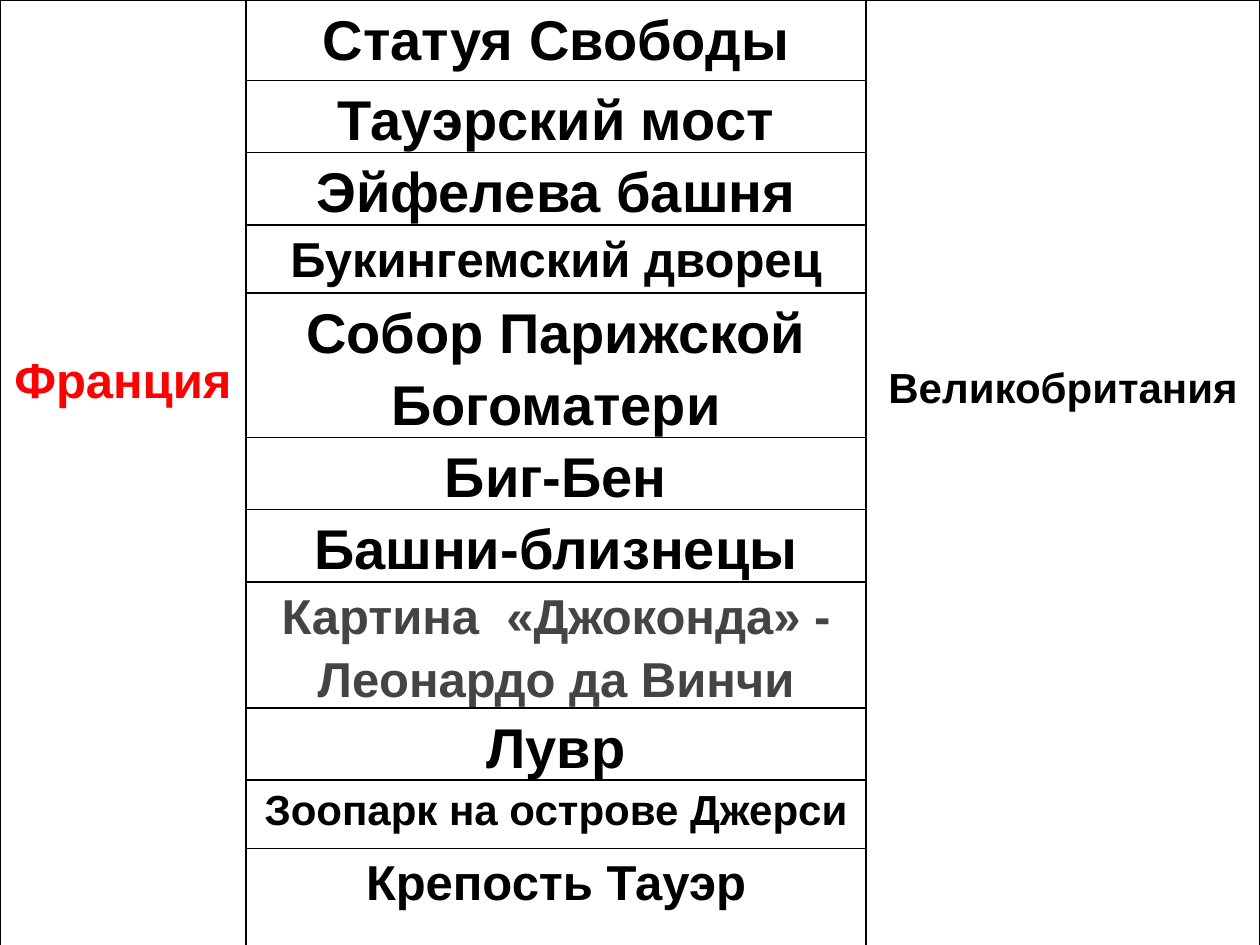
from dataclasses import dataclass

from lxml import etree
from pptx import Presentation
from pptx.dml.color import RGBColor
from pptx.enum import text
from pptx.oxml import ns
from pptx.util import Pt


@dataclass(frozen=True)
class Theme:
    """Colours, type sizes and spacing of the slide."""
    font: str = "Arial"
    ink: str = "000000"
    accent: str = "FF0000"
    muted: str = "444444"
    paper: str = "FFFFFF"
    large: int = 32
    medium: int = 28
    small: int = 24
    line_spacing: float = 1.15
    border: float = 1
    side_margin: float = 3


THEME = Theme()
COLUMN_WIDTHS = (140.5, 354.5, 225)
LANDMARKS = (
    ("Статуя Свободы", 46, THEME.large, THEME.ink),
    ("Тауэрский мост", 41, THEME.large, THEME.ink),
    ("Эйфелева башня", 41, THEME.large, THEME.ink),
    ("Букингемский дворец", 39, THEME.medium, THEME.ink),
    ("Собор Парижской Богоматери", 82.5, THEME.large, THEME.ink),
    ("Биг-Бен", 41, THEME.large, THEME.ink),
    ("Башни-близнецы", 41, THEME.large, THEME.ink),
    ("Картина  «Джоконда» - Леонардо да Винчи", 72, THEME.medium, THEME.muted),
    ("Лувр", 41, THEME.large, THEME.ink),
    ("Зоопарк на острове Джерси", 39, THEME.small, THEME.ink),
    ("Крепость Тауэр", 64, THEME.medium, THEME.ink),
)
COUNTRIES = (
    (0, "Франция", THEME.medium, THEME.accent, 198),
    (2, "Великобритания", THEME.small, THEME.ink, 205),
)


def frame_cell(cell):
    """Give a cell its border lines and paper fill."""
    properties = cell._tc.get_or_add_tcPr()
    for side in ("a:lnL", "a:lnR", "a:lnT", "a:lnB"):
        line = etree.SubElement(properties, ns.qn(side), w=str(Pt(THEME.border)))
        fill = etree.SubElement(line, ns.qn("a:solidFill"))
        etree.SubElement(fill, ns.qn("a:srgbClr"), val=THEME.ink)
    cell.fill.solid()
    cell.fill.fore_color.rgb = RGBColor.from_string(THEME.paper)


def write_cell(cell, label, size, color, top=0):
    """Write one centred bold label at a distance from the cell top."""
    cell.margin_left = cell.margin_right = Pt(THEME.side_margin)
    cell.margin_top, cell.margin_bottom = Pt(top), Pt(0)
    cell.vertical_anchor = text.MSO_ANCHOR.TOP
    paragraph = cell.text_frame.paragraphs[0]
    paragraph.text = label
    paragraph.alignment = text.PP_ALIGN.CENTER
    paragraph.line_spacing = THEME.line_spacing
    for run in paragraph.runs:
        run.font.name = THEME.font
        run.font.size = Pt(size)
        run.font.bold = True
        run.font.color.rgb = RGBColor.from_string(color)


def add_landmark_table(slide, left, top, width, height):
    """Place the landmarks between the two countries they may belong to."""
    last = len(LANDMARKS) - 1
    table = slide.shapes.add_table(
        len(LANDMARKS), len(COLUMN_WIDTHS), left, top, width, height).table
    table.first_row = table.horz_banding = False
    for column, column_width in zip(table.columns, COLUMN_WIDTHS):
        column.width = Pt(column_width)
    for cell in table.iter_cells():
        frame_cell(cell)
    for index, (landmark, row_height, size, color) in enumerate(LANDMARKS):
        table.rows[index].height = Pt(row_height)
        write_cell(table.cell(index, 1), landmark, size, color)
    for column, country, size, color, offset in COUNTRIES:
        country_cell = table.cell(0, column)
        country_cell.merge(table.cell(last, column))
        write_cell(country_cell, country, size, color, offset)


def main():
    """Build and save the one-slide presentation."""
    presentation = Presentation()
    presentation.slide_width, presentation.slide_height = Pt(720), Pt(540)
    slide = presentation.slides.add_slide(presentation.slide_layouts[6])
    table_height = sum(row[1] for row in LANDMARKS)
    add_landmark_table(slide, Pt(0), Pt(0), Pt(sum(COLUMN_WIDTHS)), Pt(table_height))
    presentation.save("out.pptx")


if __name__ == "__main__":
    main()
